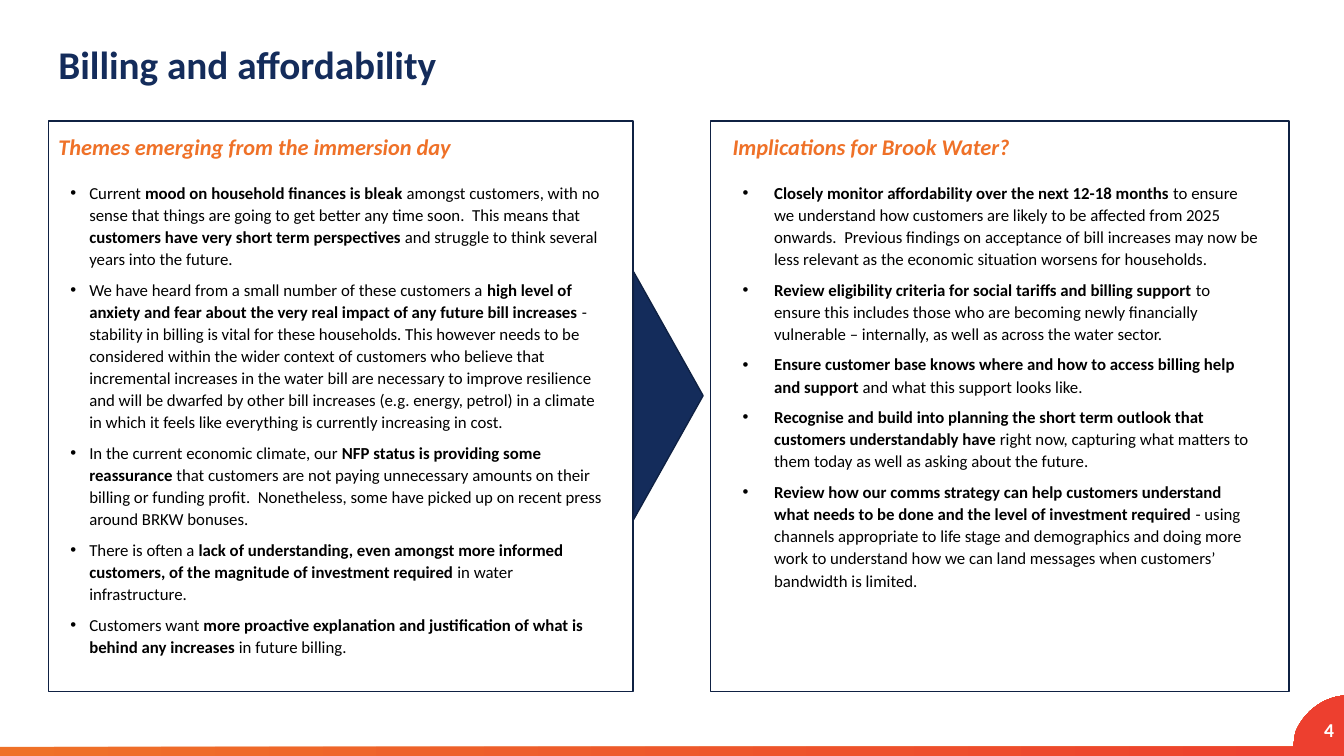
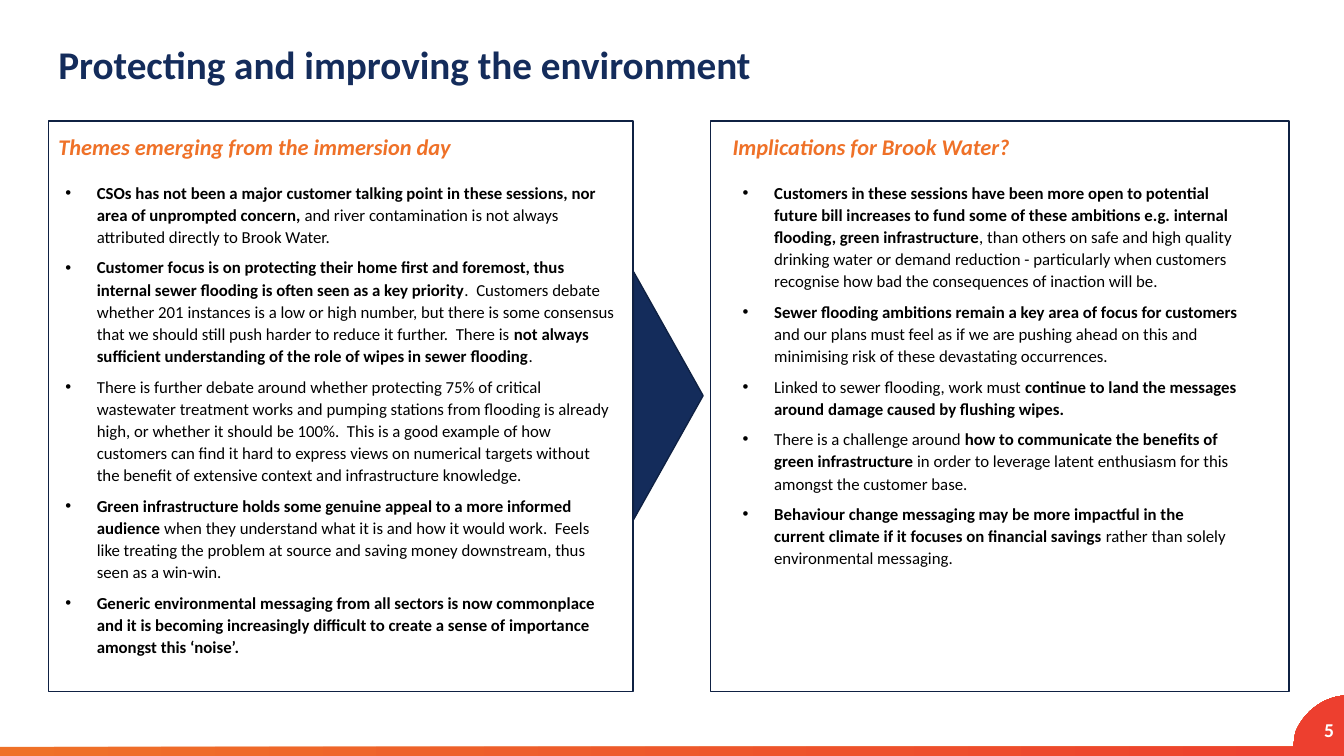
from dataclasses import dataclass

from lxml import etree
from pptx import Presentation
from pptx.dml import color
from pptx.enum import shapes, text
from pptx.oxml import ns
from pptx.util import Pt

FONT = "Calibri"
NAVY, OUTLINE, ORANGE, RED = "142C5B", "0F2143", "EF7128", "ED3F2F"
BLACK, WHITE = "000000", "FFFFFF"
SLIDE_W, SLIDE_H = 960, 540
BAND_TOP = 533.5
PANEL_TOP, PANEL_H = 86.4, 407.5
BULLETS_TOP, BULLETS_H = 125.3, 347.8


@dataclass(frozen=True)
class Panel:
    heading: str
    left: float
    width: float
    heading_left: float
    heading_width: float


@dataclass(frozen=True)
class Bullets:
    """Bullet list; bold passages stand between asterisks."""
    left: float
    width: float
    indent: float
    items: tuple[str, ...]


@dataclass(frozen=True)
class Topic:
    number: int
    title: str
    themes: Bullets
    implications: Bullets


THEMES = Panel("Themes emerging from the immersion day", 34.6, 417.6, 34.6, 390)
IMPLICATIONS = Panel("Implications for Brook Water?", 507.6, 413.3, 516.2, 304)

TOPICS = (
    Topic(
        4, "Billing and affordability",
        Bullets(43.2, 397.4, 13.5, (
            "Current *mood on household finances is bleak *amongst customers, with no "
            "sense that things are going to get better any time soon.  This means that "
            "*customers have very short term perspectives* and struggle to think several "
            "years into the future.",
            "We have heard from a small number of these customers a *high level of anxiety "
            "and fear about the very real impact of any future bill increases* - stability "
            "in billing is vital for these households. This however needs to be considered "
            "within the wider context of customers who believe that incremental increases "
            "in the water bill are necessary to improve resilience and will be dwarfed by "
            "other bill increases (e.g. energy, petrol) in a climate in which it feels like "
            "everything is currently increasing in cost.",
            "In the current economic climate, our *NFP status is providing some reassurance "
            "*that customers are not paying unnecessary amounts on their billing or funding "
            "profit.  Nonetheless, some have picked up on recent press around BRKW bonuses.",
            "There is often a *lack of understanding, even amongst more informed customers, "
            "of the magnitude of investment required *in water infrastructure.",
            "Customers want *more proactive explanation and justification of what is behind "
            "any increases *in future billing.",
        )),
        Bullets(523.4, 383.8, 22.5, (
            "*Closely monitor affordability over the next 12-18 months *to ensure we "
            "understand how customers are likely to be affected from 2025 onwards.  Previous "
            "findings on acceptance of bill increases may now be less relevant as the "
            "economic situation worsens for households.",
            "*Review eligibility criteria for social tariffs and billing support *to ensure "
            "this includes those who are becoming newly financially vulnerable – internally, "
            "as well as across the water sector.",
            "*Ensure customer base knows where and how to access billing help and support "
            "*and what this support looks like.",
            "*Recognise and build into planning the short term outlook that customers "
            "understandably have *right now, capturing what matters to them today as well "
            "as asking about the future.",
            "*Review how our comms strategy can help customers understand what needs to be "
            "done and the level of investment required *- using channels appropriate to life "
            "stage and demographics and doing more work to understand how we can land "
            "messages when customers’ bandwidth is limited.",
        )),
    ),
    Topic(
        5, "Protecting and improving the environment",
        Bullets(39.6, 408.2, 22.5, (
            "*CSOs has not been a major customer talking point in these sessions, nor area "
            "of unprompted concern, *and river contamination is not always attributed "
            "directly to Brook Water.",
            "*Customer focus is on protecting their home first and foremost, thus internal "
            "sewer flooding is often seen as a key priority*.  Customers debate whether 201 "
            "instances is a low or high number, but there is some consensus that we should "
            "still push harder to reduce it further.  There is *not always sufficient "
            "understanding of the role of wipes in sewer flooding*.",
            "There is further debate around whether protecting 75% of critical wastewater "
            "treatment works and pumping stations from flooding is already high, or whether "
            "it should be 100%.  This is a good example of how customers can find it hard to "
            "express views on numerical targets without the benefit of extensive context and "
            "infrastructure knowledge.",
            "*Green infrastructure holds some genuine appeal to a more informed audience "
            "*when they understand what it is and how it would work.  Feels like treating "
            "the problem at source and saving money downstream, thus seen as a win-win.",
            "*Generic environmental messaging from all sectors is now commonplace and it is "
            "becoming increasingly difficult to create a sense of importance amongst this "
            "‘noise’.*",
        )),
        Bullets(523.4, 368.6, 22.5, (
            "*Customers in these sessions have been more open to potential future bill "
            "increases to fund some of these ambitions e.g. internal flooding, green "
            "infrastructure*, than others on safe and high quality drinking water or demand "
            "reduction - particularly when customers recognise how bad the consequences of "
            "inaction will be.",
            "*Sewer flooding ambitions remain a key area of focus for customers *and our "
            "plans must feel as if we are pushing ahead on this and minimising risk of these "
            "devastating occurrences.",
            "Linked to sewer flooding, work must *continue to land the messages around "
            "damage caused by flushing wipes.*",
            "There is a challenge around *how to communicate the benefits of green "
            "infrastructure *in order to leverage latent enthusiasm for this amongst the "
            "customer base.",
            "*Behaviour change messaging may be more impactful in the current climate if it "
            "focuses on financial savings *rather than solely environmental messaging.",
        )),
    ),
)


def rgb(hex_code: str) -> color.RGBColor:
    return color.RGBColor.from_string(hex_code)


def set_bullet(paragraph, indent: float) -> None:
    properties = paragraph._p.get_or_add_pPr()
    properties.set("marL", str(Pt(indent)))
    properties.set("indent", str(-Pt(indent)))
    etree.SubElement(properties, ns.qn("a:buFont"), typeface="Arial")
    etree.SubElement(properties, ns.qn("a:buChar"), char="•")


def add_text(slide, items: tuple[str, ...], left: float, top: float, width: float,
             height: float, *, size: float, ink: str, bold: bool = False,
             italic: bool = False, spacing: float = 1.0, after: float = 0,
             indent: float = 0, inset_y: float = 3.6, align=text.PP_ALIGN.LEFT,
             anchor=text.MSO_ANCHOR.TOP) -> None:
    """Write one paragraph per item; asterisks switch bold on and off."""
    frame = slide.shapes.add_textbox(Pt(left), Pt(top), Pt(width), Pt(height)).text_frame
    frame.word_wrap = True
    frame.vertical_anchor = anchor
    frame.margin_top = frame.margin_bottom = Pt(inset_y)
    for position, item in enumerate(items):
        paragraph = frame.add_paragraph() if position else frame.paragraphs[0]
        paragraph.alignment = align
        paragraph.line_spacing = spacing
        paragraph.space_after = Pt(after)
        if indent:
            set_bullet(paragraph, indent)
        for part, passage in enumerate(item.split("*")):
            if passage:
                run = paragraph.add_run()
                run.text = passage
                run.font.name, run.font.size = FONT, Pt(size)
                run.font.bold, run.font.italic = bold or part % 2 == 1, italic
                run.font.color.rgb = rgb(ink)


def add_outlined(slide, kind, left: float, top: float, width: float, height: float,
                 fill: str | None = None):
    shape = slide.shapes.add_shape(kind, Pt(left), Pt(top), Pt(width), Pt(height))
    shape.shadow.inherit = False
    shape.line.color.rgb = rgb(OUTLINE)
    shape.line.width = Pt(1)
    if fill:
        shape.fill.solid()
        shape.fill.fore_color.rgb = rgb(fill)
    else:
        shape.fill.background()
    return shape


def bezier(points: tuple[tuple[float, float], ...], steps: int = 24):
    """Points along a cubic curve given by its ends and two handles."""
    for step in range(steps + 1):
        t = step / steps
        weights = ((1 - t) ** 3, 3 * t * (1 - t) ** 2, 3 * t * t * (1 - t), t ** 3)
        yield tuple(sum(w * p[axis] for w, p in zip(weights, points)) for axis in (0, 1))


def add_footer(slide, number: int) -> None:
    corner = bezier(((925.2, 523.4), (930.2, 510.5), (941.8, 500.4), (955.4, 497.5)))
    outline = [(SLIDE_W, SLIDE_H), (0, SLIDE_H), (0, BAND_TOP), (923.8, BAND_TOP), *corner]
    builder = slide.shapes.build_freeform(Pt(SLIDE_W), Pt(496.8))
    builder.add_line_segments([(Pt(x), Pt(y)) for x, y in outline], close=True)
    band = builder.convert_to_shape()
    band.shadow.inherit = False
    band.line.fill.background()
    band.fill.gradient()
    band.fill.gradient_angle = 0
    for stop, tint in zip(band.fill.gradient_stops, (ORANGE, RED)):
        stop.color.rgb = rgb(tint)
    add_text(slide, (str(number),), 892, 507, 68, 28.8, size=14, ink=WHITE, bold=True,
             inset_y=0, align=text.PP_ALIGN.RIGHT, anchor=text.MSO_ANCHOR.MIDDLE)


def add_panel(slide, panel: Panel, bullets: Bullets) -> None:
    add_outlined(slide, shapes.MSO_SHAPE.RECTANGLE, panel.left, PANEL_TOP,
                 panel.width, PANEL_H)
    add_text(slide, (panel.heading,), panel.heading_left, 85.7, panel.heading_width, 59,
             size=16, ink=ORANGE, bold=True, italic=True, spacing=1.3)
    add_text(slide, bullets.items, bullets.left, BULLETS_TOP, bullets.width, BULLETS_H,
             size=12, ink=BLACK, spacing=1.1, after=6, indent=bullets.indent)


def add_topic(deck, topic: Topic) -> None:
    slide = deck.slides.add_slide(deck.slide_layouts[6])
    add_footer(slide, topic.number)
    add_text(slide, (topic.title,), 34.6, 28.8, 890, 43.2, size=28, ink=NAVY, bold=True,
             spacing=0.9)
    add_panel(slide, THEMES, topic.themes)
    add_panel(slide, IMPLICATIONS, topic.implications)
    arrow = add_outlined(slide, shapes.MSO_SHAPE.ISOSCELES_TRIANGLE, 388.8, 257.8,
                         177.1, 49.7, NAVY)
    arrow.rotation = 90


def main() -> None:
    deck = Presentation()
    deck.slide_width, deck.slide_height = Pt(SLIDE_W), Pt(SLIDE_H)
    for topic in TOPICS:
        add_topic(deck, topic)
    deck.save("out.pptx")


if __name__ == "__main__":
    main()
